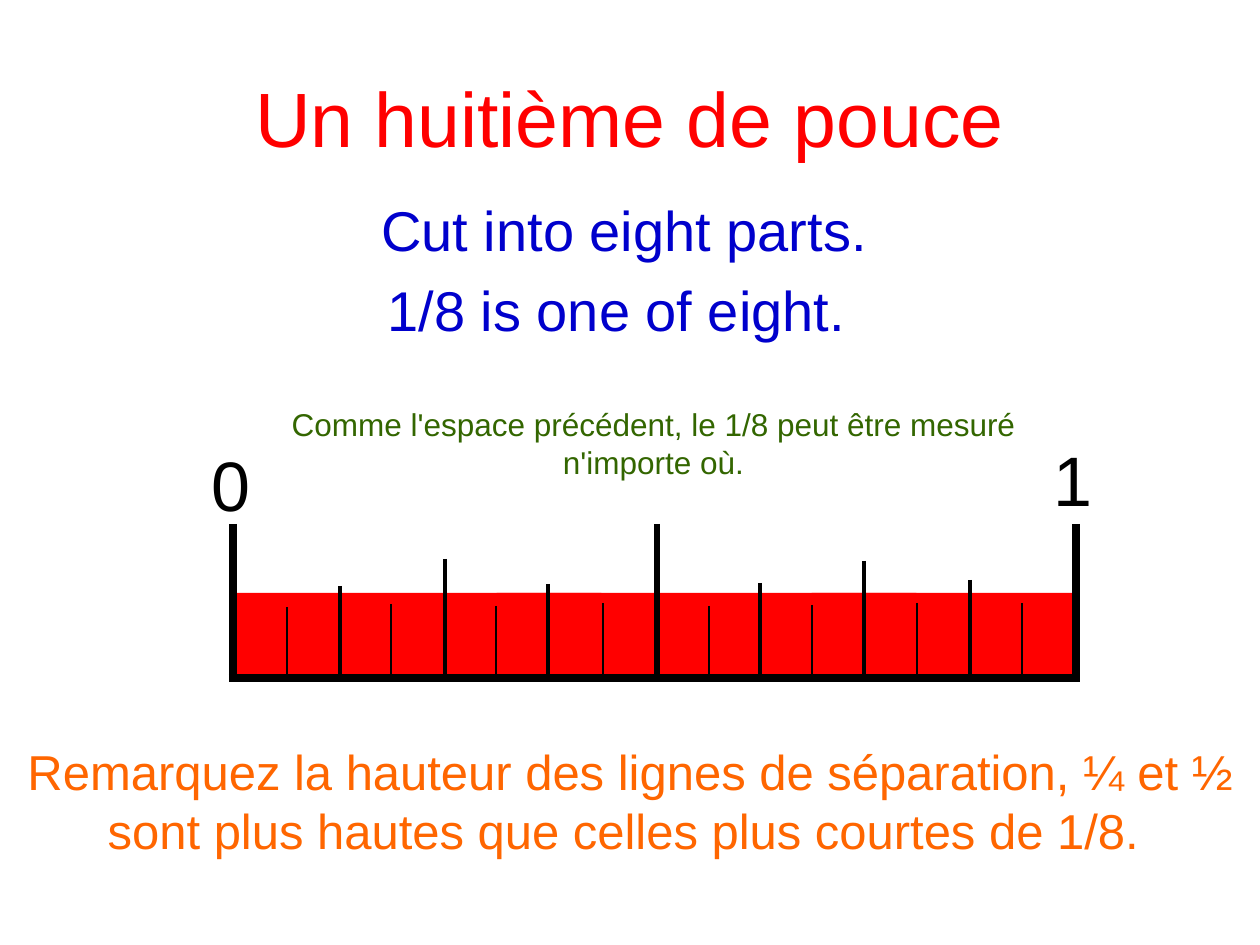
from dataclasses import dataclass

from lxml.etree import SubElement
from pptx import Presentation
from pptx.dml.color import RGBColor
from pptx.enum.shapes import MSO_CONNECTOR, MSO_SHAPE
from pptx.enum.text import MSO_ANCHOR, PP_ALIGN
from pptx.oxml.ns import qn
from pptx.slide import Slide
from pptx.util import Emu, Pt

EMU_PER_PX = 914400 / 126

RED = RGBColor(0xFF, 0x00, 0x00)
BLUE = RGBColor(0x00, 0x00, 0xCC)
GREEN = RGBColor(0x33, 0x66, 0x00)
ORANGE = RGBColor(0xFF, 0x66, 0x00)
BLACK = RGBColor(0x00, 0x00, 0x00)

BAND_LEFT, BAND_TOP = 234, 593
EIGHTH, BAND_HEIGHT = 105, 84
# Offsets in eighths; two cells lie across their neighbours
CELL_OFFSETS = (0, 1, 2, 2.5, 3, 4, 5, 5.5, 6, 7)

EDGE, HALF, EIGHTH_MARK, SIXTEENTH_MARK = 4.5, 3, 2.25, 0.75


@dataclass(frozen=True)
class RulerLine:
    x1: int
    y1: int
    x2: int
    y2: int
    weight: float


@dataclass(frozen=True)
class Caption:
    left: int
    top: int
    width: int
    height: int
    lines: tuple[str, ...]
    size: int
    color: RGBColor
    align: PP_ALIGN = PP_ALIGN.CENTER
    anchor: MSO_ANCHOR = MSO_ANCHOR.TOP
    first_gap: float = 0
    line_gap: float = 0


def mark(x: int, top: int, bottom: int, weight: float) -> RulerLine:
    return RulerLine(x, top, x, bottom, weight)


RULER_LINES = (
    mark(864, 561, 677, EIGHTH_MARK),
    mark(657, 524, 681, HALF),
    RulerLine(229, 678, 1080, 678, EDGE),
    mark(233, 524, 681, EDGE),
    mark(1076, 524, 681, EDGE),
    mark(445, 559, 675, EIGHTH_MARK),
    mark(548, 584, 679, EIGHTH_MARK),
    mark(340, 586, 680, EIGHTH_MARK),
    mark(760, 583, 678, EIGHTH_MARK),
    mark(970, 580, 675, EIGHTH_MARK),
    mark(287, 607, 681, SIXTEENTH_MARK),
    mark(391, 604, 678, SIXTEENTH_MARK),
    mark(496, 606, 679, SIXTEENTH_MARK),
    mark(603, 603, 677, SIXTEENTH_MARK),
    mark(709, 606, 680, SIXTEENTH_MARK),
    mark(812, 605, 679, SIXTEENTH_MARK),
    mark(917, 603, 677, SIXTEENTH_MARK),
    mark(1022, 603, 678, SIXTEENTH_MARK),
)

CAPTIONS = (
    Caption(63, 38, 1134, 157, ("Un huitième de pouce",), 44, RED,
            anchor=MSO_ANCHOR.MIDDLE),
    Caption(21, 189, 1207, 294, ("Cut into eight parts.", "1/8 is one of eight. "),
            32, BLUE, first_gap=3, line_gap=7.5),
    Caption(199, 435, 126, 97, ("0",), 40, BLACK, PP_ALIGN.LEFT, first_gap=4),
    Caption(1041, 430, 105, 97, ("1",), 40, BLACK, PP_ALIGN.LEFT, first_gap=4),
    Caption(0, 735, 1260, 189,
            ("Remarquez la hauteur des lignes de séparation, ¼ et ½ "
             "sont plus hautes que celles plus courtes de 1/8. ",),
            28, ORANGE, first_gap=3),
    Caption(228, 399, 851, 89,
            ("Comme l'espace précédent, le 1/8 peut être mesuré n'importe où.",),
            18, GREEN, first_gap=1.5),
)


def px(length: float) -> Emu:
    return Emu(round(length * EMU_PER_PX))


def draw_cell(slide: Slide, offset: float) -> None:
    cell = slide.shapes.add_shape(
        MSO_SHAPE.RECTANGLE, px(BAND_LEFT + offset * EIGHTH), px(BAND_TOP),
        px(EIGHTH), px(BAND_HEIGHT))
    cell.shadow.inherit = False
    cell.fill.solid()
    cell.fill.fore_color.rgb = RED
    cell.line.fill.background()


def draw_ruler_line(slide: Slide, ruler_line: RulerLine) -> None:
    connector = slide.shapes.add_connector(
        MSO_CONNECTOR.STRAIGHT, px(ruler_line.x1), px(ruler_line.y1),
        px(ruler_line.x2), px(ruler_line.y2))
    connector.line.color.rgb = BLACK
    connector.line.width = Pt(ruler_line.weight)
    SubElement(connector._element.spPr, qn("a:effectLst"))


def draw_caption(slide: Slide, caption: Caption) -> None:
    frame = slide.shapes.add_textbox(
        px(caption.left), px(caption.top),
        px(caption.width), px(caption.height)).text_frame
    frame.word_wrap = True
    frame.vertical_anchor = caption.anchor
    frame.text = "\n".join(caption.lines)
    for index, paragraph in enumerate(frame.paragraphs):
        paragraph.alignment = caption.align
        paragraph.space_before = Pt(caption.line_gap if index else caption.first_gap)
        paragraph.font.name = "Arial"
        paragraph.font.size = Pt(caption.size)
        paragraph.font.color.rgb = caption.color


def main() -> None:
    presentation = Presentation()
    presentation.slide_width, presentation.slide_height = px(1260), px(945)
    slide = presentation.slides.add_slide(presentation.slide_layouts[6])
    for offset in CELL_OFFSETS:
        draw_cell(slide, offset)
    for ruler_line in RULER_LINES:
        draw_ruler_line(slide, ruler_line)
    for caption in CAPTIONS:
        draw_caption(slide, caption)
    presentation.save("out.pptx")


if __name__ == "__main__":
    main()
